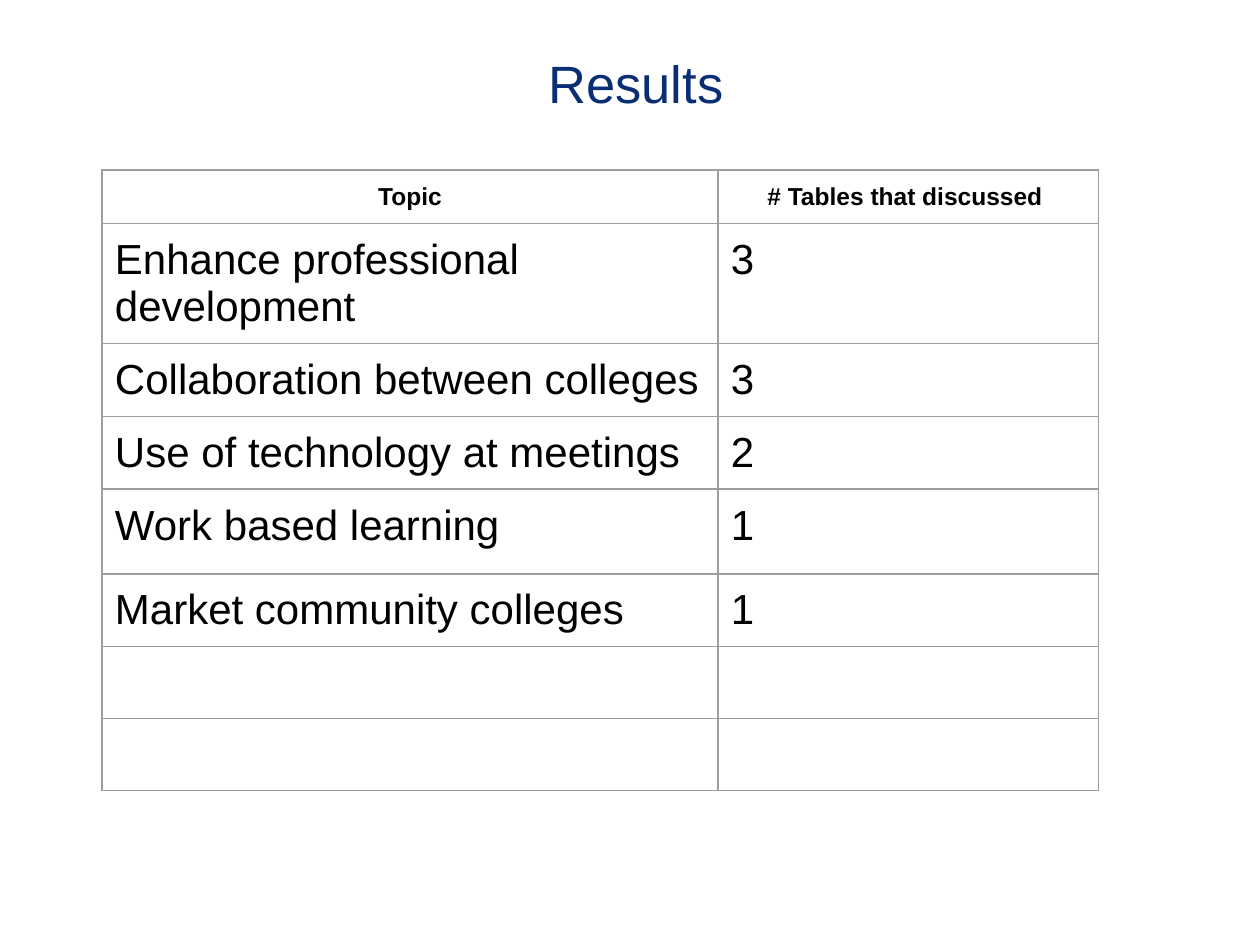
from dataclasses import dataclass

from lxml.etree import fromstring
from pptx import Presentation
from pptx.dml.color import RGBColor
from pptx.enum.text import MSO_ANCHOR as Anchor, PP_ALIGN as Align
from pptx.oxml.ns import nsdecls
from pptx.util import Emu, Pt


@dataclass(frozen=True)
class Theme:
    font: str = "Arial"
    title_color: str = "0A2E73"
    text_color: str = "000000"
    border_color: str = "9E9E9E"
    title_size: int = 30
    header_size: int = 14
    body_size: int = 24
    border_width: float = 0.75


theme = Theme()


def px(length):
    return Emu(round(length * 914400 / 126))


def write(frame, text, size, color, align, bold=False):
    frame.margin_left = frame.margin_right = px(13)
    frame.margin_top = frame.margin_bottom = px(13)
    paragraph = frame.paragraphs[0]
    paragraph.alignment = align
    run = paragraph.add_run()
    run.text = text
    run.font.name = theme.font
    run.font.size = Pt(size)
    run.font.bold = bold
    run.font.color.rgb = RGBColor.from_string(color)


presentation = Presentation()
presentation.slide_width, presentation.slide_height = px(1260), px(945)
slide = presentation.slides.add_slide(presentation.slide_layouts[5])

# Title
title = slide.shapes.title
title.left, title.top, title.width, title.height = px(53), px(35), px(1166), px(96)
title.text_frame.vertical_anchor = Anchor.MIDDLE
write(title.text_frame, "Results", theme.title_size, theme.title_color, Align.CENTER)

# Results table
rows = [
    ("Topic", "# Tables that discussed "),
    ("Enhance professional development", "3"),
    ("Collaboration between colleges", "3"),
    ("Use of technology at meetings", "2"),
    ("Work based learning", "1"),
    ("Market community colleges", "1"),
    ("", ""),
    ("", ""),
]
column_widths = [616, 381]
row_heights = [53, 119, 72, 72, 85, 72, 72, 72]
table = slide.shapes.add_table(
    len(rows), len(column_widths), px(102), px(170),
    px(sum(column_widths)), px(sum(row_heights)),
).table
table.first_row = table.horz_banding = False
for column, width in zip(table.columns, column_widths):
    column.width = px(width)

for row_index, (row, height, texts) in enumerate(zip(table.rows, row_heights, rows)):
    row.height = px(height)
    is_header = row_index == 0
    for cell, text in zip(row.cells, texts):
        cell.fill.background()
        cell.margin_left = cell.margin_right = px(13)
        cell.margin_top = cell.margin_bottom = px(13)
        if text:
            write(
                cell.text_frame, text,
                theme.header_size if is_header else theme.body_size,
                theme.text_color,
                Align.CENTER if is_header else Align.LEFT,
                bold=is_header,
            )

        # Cell borders come before the fill
        properties = cell._tc.get_or_add_tcPr()
        for position, side in enumerate(("lnL", "lnR", "lnT", "lnB")):
            properties.insert(position, fromstring(
                f'<a:{side} {nsdecls("a")} w="{Pt(theme.border_width)}"><a:solidFill>'
                f'<a:srgbClr val="{theme.border_color}"/></a:solidFill></a:{side}>'
            ))

presentation.save("out.pptx")
